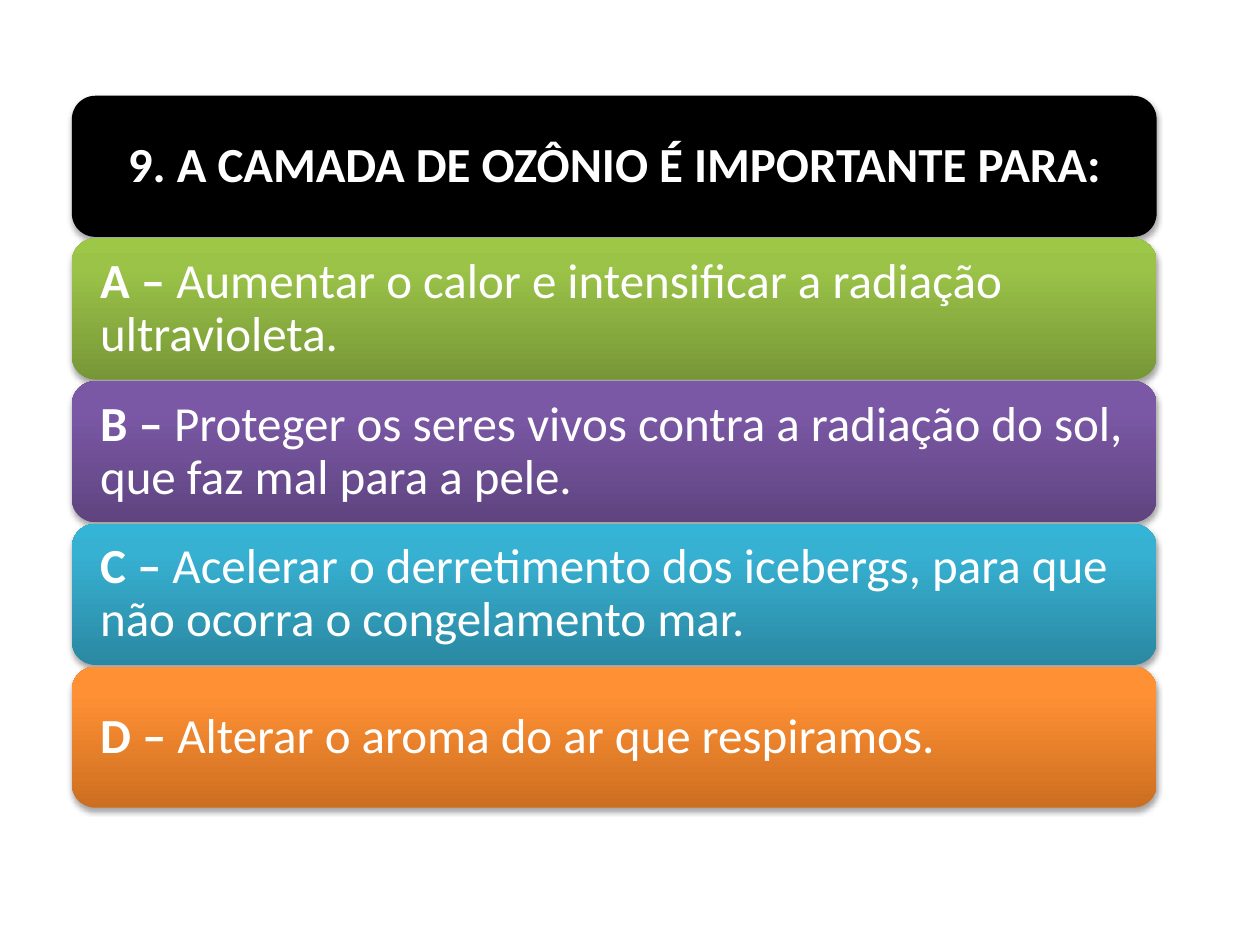
from copy import deepcopy

from lxml import etree
from pptx import Presentation
from pptx.dml.color import RGBColor
from pptx.enum.shapes import MSO_SHAPE as Shape
from pptx.enum.text import MSO_ANCHOR as Anchor, MSO_AUTO_SIZE as AutoSize, PP_ALIGN as Align
from pptx.oxml.ns import qn
from pptx.util import Inches, Pt

COLORS = {
    "title": "000000",
    "text": "FFFFFF",
    "shadow": "000000",
    # Gradients run from the bottom of a bar to its top
    "green": ("779737", "9BC348", "9DC746"),
    "purple": ("5F4480", "7B58A6", "7C57A8"),
    "blue": ("2A88A2", "37B1D2", "34B4D6"),
    "orange": ("CC6E20", "FF9034", "FF9136"),
}
GRADIENT_POSITIONS = (0, 0.8, 1)

QUESTION = "9. A CAMADA DE OZÔNIO É IMPORTANTE PARA:"
ANSWERS = [
    ("A – ", "Aumentar o calor e intensificar a radiação ultravioleta.", "green"),
    ("B – ", "Proteger os seres vivos contra a radiação do sol, que faz mal para a pele.", "purple"),
    ("C – ", "Acelerar o derretimento dos icebergs, para que não ocorra o congelamento mar.", "blue"),
    ("D – ", "Alterar o aroma do ar que respiramos.", "orange"),
]

# Bars are spread evenly from the first top to the last
LEFT, WIDTH, HEIGHT = 0.57, 8.61, 1.12
FIRST_TOP, LAST_TOP = 0.76, 5.29
STEP = (LAST_TOP - FIRST_TOP) / len(ANSWERS)

MARGIN = Inches(0.17)
FRAME_FORMAT = {
    "word_wrap": True,
    "auto_size": AutoSize.NONE,
    "vertical_anchor": Anchor.MIDDLE,
    "margin_left": MARGIN,
    "margin_right": MARGIN,
    "margin_top": MARGIN,
    "margin_bottom": MARGIN,
}


def set_attributes(target, values):
    for name, value in values.items():
        setattr(target, name, value)


def add_shadow(shape):
    shape.shadow.inherit = False
    effects = shape.element.spPr.find(qn("a:effectLst"))
    shadow = etree.SubElement(
        effects, qn("a:outerShdw"),
        blurRad=str(Pt(3.1)), dist=str(Pt(1.8)), dir="5400000", rotWithShape="0")
    color = etree.SubElement(shadow, qn("a:srgbClr"), val=COLORS["shadow"])
    etree.SubElement(color, qn("a:alpha"), val="35000")


def add_bar(slide, row):
    bar = slide.shapes.add_shape(
        Shape.ROUNDED_RECTANGLE, Inches(LEFT), Inches(FIRST_TOP + row * STEP),
        Inches(WIDTH), Inches(HEIGHT))
    bar.line.fill.background()
    add_shadow(bar)
    return bar


def fill_gradient(shape, colors):
    shape.fill.gradient()
    shape.fill.gradient_angle = 90
    # The default gradient has two stops; a third is needed
    stop_list = shape.element.spPr.find(".//" + qn("a:gsLst"))
    stop_list.append(deepcopy(stop_list[-1]))
    for stop, position, color in zip(shape.fill.gradient_stops, GRADIENT_POSITIONS, colors):
        stop.position = position
        stop.color.rgb = RGBColor.from_string(color)


def write_text(shape, runs, alignment):
    frame = shape.text_frame
    set_attributes(frame, FRAME_FORMAT)
    paragraph = frame.paragraphs[0]
    set_attributes(paragraph, {"alignment": alignment, "line_spacing": 0.9})
    for text, bold in runs:
        run = paragraph.add_run()
        run.text = text
        set_attributes(run.font, {"name": "Calibri", "size": Pt(28), "bold": bold})
        run.font.color.rgb = RGBColor.from_string(COLORS["text"])


def add_question(slide):
    bar = add_bar(slide, 0)
    bar.fill.solid()
    bar.fill.fore_color.rgb = RGBColor.from_string(COLORS["title"])
    # The title lies on top of its bar
    title = slide.shapes.title
    bounds = {name: getattr(bar, name) for name in ("left", "top", "width", "height")}
    set_attributes(title, bounds)
    write_text(title, [(QUESTION, True)], Align.CENTER)
    bar.element.addnext(title.element)


def add_answer(slide, row, letter, answer, color):
    bar = add_bar(slide, row)
    fill_gradient(bar, COLORS[color])
    write_text(bar, [(letter, True), (answer, False)], Align.LEFT)


def main():
    presentation = Presentation()
    set_attributes(presentation, {"slide_width": Inches(10), "slide_height": Inches(7.5)})
    title_only = presentation.slide_layouts.get_by_name("Title Only")
    slide = presentation.slides.add_slide(title_only)

    add_question(slide)
    for row, (letter, answer, color) in enumerate(ANSWERS, start=1):
        add_answer(slide, row, letter, answer, color)

    presentation.save("out.pptx")


if __name__ == "__main__":
    main()
